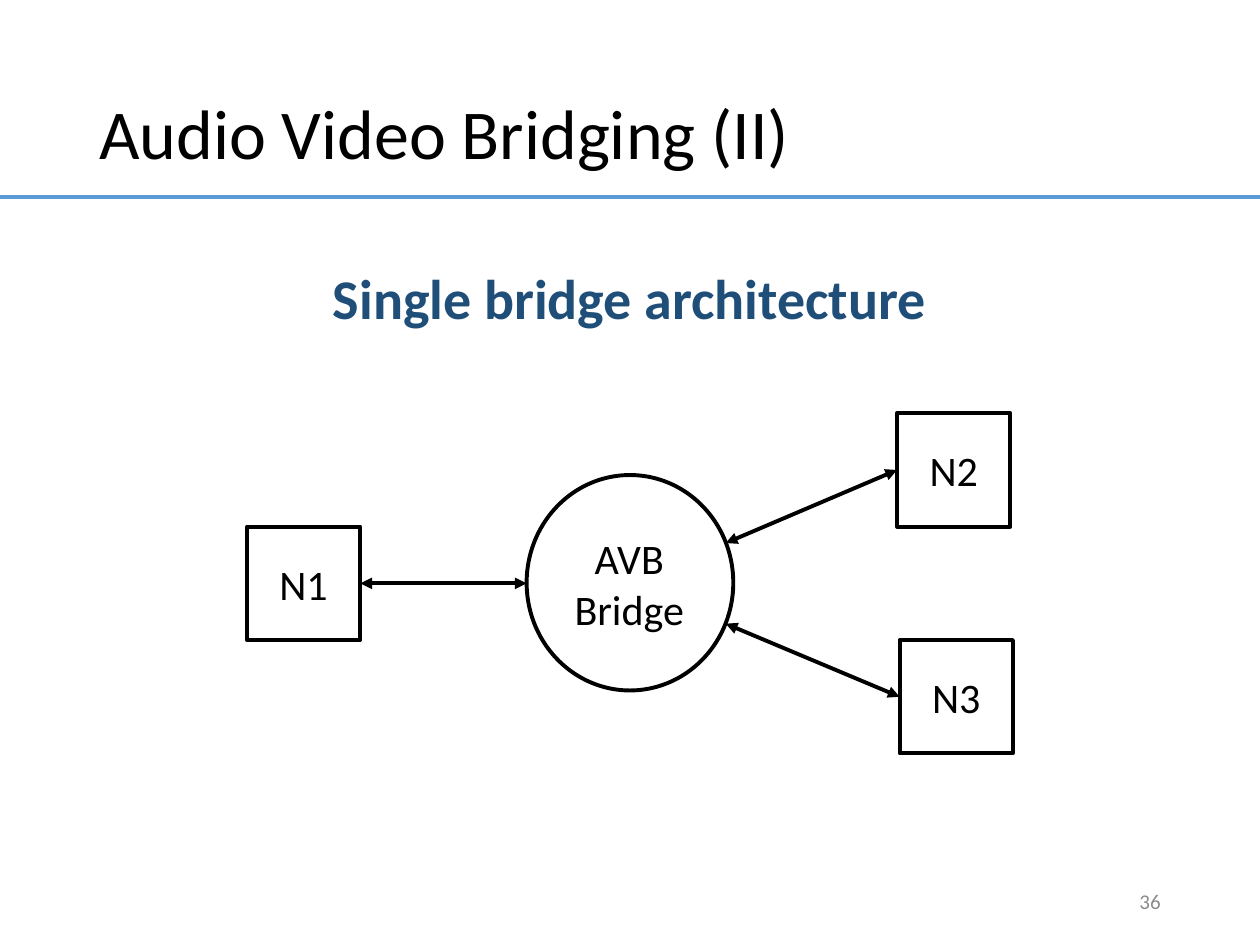
from lxml import etree
from pptx import Presentation
from pptx.dml.color import RGBColor
from pptx.enum.shapes import MSO_CONNECTOR, MSO_SHAPE
from pptx.enum.text import MSO_ANCHOR, PP_ALIGN
from pptx.oxml.ns import qn
from pptx.util import Inches, Pt

LEFT, CENTER, RIGHT = PP_ALIGN.LEFT, PP_ALIGN.CENTER, PP_ALIGN.RIGHT
MIDDLE = MSO_ANCHOR.MIDDLE
RECTANGLE, OVAL = MSO_SHAPE.RECTANGLE, MSO_SHAPE.OVAL
STRAIGHT = MSO_CONNECTOR.STRAIGHT

BLACK, RULE_BLUE = "000000", "5B9BD5"
LINE_WIDTH = 2.25
NODE_SIZE = 0.9
LEFT_SIDE, RIGHT_SIDE = 1, 3

NODE_FORMAT = {"size": 24, "color": BLACK, "align": CENTER}
TEXTS = [
    ("Audio Video Bridging (II)", (0.69, 0.33, 8.62, 1.51),
     {"size": 40, "color": BLACK, "align": LEFT, "line_spacing": 0.9}),
    ("Single bridge architecture", (0, 2.09, 10, 0.61),
     {"size": 32, "color": "1F4E79", "align": CENTER, "line_spacing": 0.9, "bold": True}),
    ("AVB Bridge", (4.16, 4.13, 1.67, 1), NODE_FORMAT),
    ("36", (7.06, 6.95, 2.25, 0.4), {"size": 12, "color": "8C8C8C", "align": RIGHT}),
]
BRIDGE = (4.18, 3.77, 1.64, 1.71)
NODES = [
    ("N1", (1.96, 4.18), RIGHT_SIDE, (4.18, 4.63)),
    ("N2", (7.12, 3.28), LEFT_SIDE, (5.76, 4.31)),
    ("N3", (7.14, 5.08), LEFT_SIDE, (5.76, 4.95)),
]


def rgb(value):
    """Turn a hex string into a colour."""
    return RGBColor.from_string(value)


def write_text(shape, text, style):
    """Fill a shape with one formatted paragraph."""
    frame = shape.text_frame
    frame.word_wrap = True
    frame.vertical_anchor = MIDDLE
    paragraph = frame.paragraphs[0]
    paragraph.alignment = style["align"]
    paragraph.line_spacing = style.get("line_spacing", 1.0)
    run = paragraph.add_run()
    run.text = text
    run.font.color.rgb = rgb(style["color"])
    font_values = {"name": "Calibri", "size": Pt(style["size"]), "bold": style.get("bold", False)}
    for name, value in font_values.items():
        setattr(run.font, name, value)


def set_line(shape, color):
    """Give a shape or connector its outline."""
    shape.line.color.rgb = rgb(color)
    shape.line.width = Pt(LINE_WIDTH)


def add_outline(slide, kind, box):
    """Add an unfilled outlined shape."""
    shape = slide.shapes.add_shape(kind, *map(Inches, box))
    shape.shadow.inherit = False
    shape.fill.background()
    set_line(shape, BLACK)
    return shape


def add_line(slide, start, end, color, arrows=False):
    """Add a straight line, with arrowheads at both ends if asked."""
    connector = slide.shapes.add_connector(STRAIGHT, *map(Inches, start + end))
    set_line(connector, color)
    if arrows:
        outline = connector.line._get_or_add_ln()
        for tag in ("a:headEnd", "a:tailEnd"):
            etree.SubElement(outline, qn(tag), type="triangle")
    etree.SubElement(connector._element.spPr, qn("a:effectLst"))
    return connector


def main():
    """Build the bridge architecture slide."""
    presentation = Presentation()
    presentation.slide_width, presentation.slide_height = Inches(10), Inches(7.5)
    slide = presentation.slides.add_slide(presentation.slide_layouts[6])

    add_line(slide, (0, 1.56), (10, 1.56), RULE_BLUE)
    add_outline(slide, OVAL, BRIDGE)
    for name, corner, side, bridge_point in NODES:
        node = add_outline(slide, RECTANGLE, corner + (NODE_SIZE, NODE_SIZE))
        write_text(node, name, NODE_FORMAT)
        link = add_line(slide, corner, bridge_point, BLACK, arrows=True)
        link.begin_connect(node, side)
    for text, box, style in TEXTS:
        write_text(slide.shapes.add_textbox(*map(Inches, box)), text, style)

    presentation.save("out.pptx")


if __name__ == "__main__":
    main()
